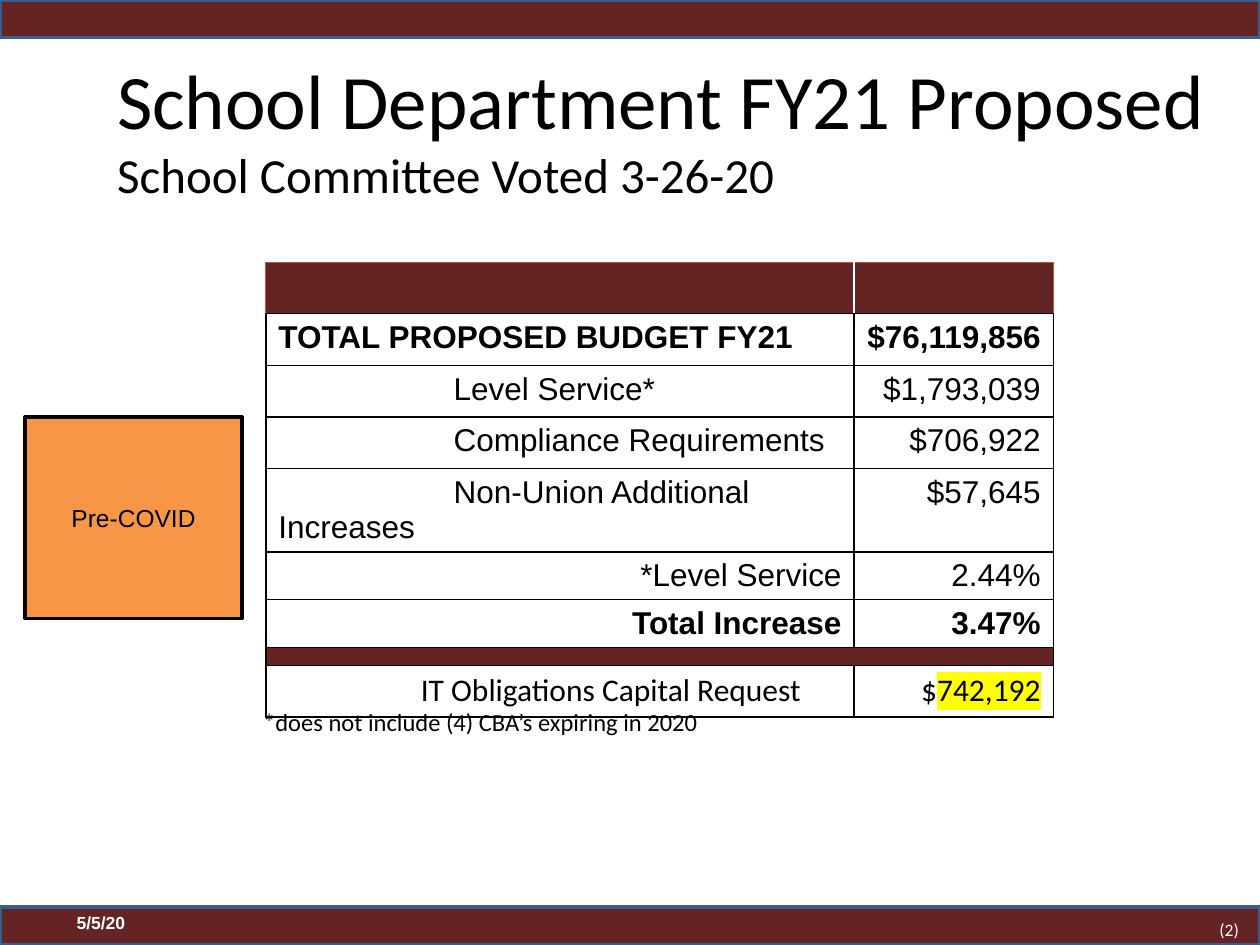
import pptx
import pptx.util
import pptx.dml.color
import pptx.enum.shapes
import pptx.enum.text
import pptx.oxml
import pptx.oxml.ns

Inches, Pt = pptx.util.Inches, pptx.util.Pt
ALIGN, ANCHOR = pptx.enum.text.PP_ALIGN, pptx.enum.text.MSO_ANCHOR
NS = pptx.oxml.ns.nsdecls("a")

# Content
WIDTH, HEIGHT = 10, 7.5
MAROON, BAND_LINE, ORANGE = "632423", "395E89", "F79646"
BLACK, WHITE, YELLOW, RED = "000000", "FFFFFF", "FFFF00", "C0504D"
TITLE = [("School Department FY21 Proposed", 44), ("School Committee Voted 3-26-20", 28)]
INDENT = 1.39
# label, amount, height, bold, font, alignment of label, first-line indent
BUDGET = [
    ("", "", 0.41, False, "Arial", ALIGN.LEFT, 0),
    ("TOTAL PROPOSED BUDGET FY21", "$76,119,856", 0.41, True, "Arial", ALIGN.LEFT, 0),
    ("Level Service*", "$1,793,039", 0.41, False, "Arial", ALIGN.LEFT, INDENT),
    ("Compliance Requirements", "$706,922", 0.41, False, "Arial", ALIGN.LEFT, INDENT),
    ("Non-Union Additional Increases", "$57,645", 0.66, False, "Arial", ALIGN.LEFT, INDENT),
    ("*Level Service", "2.44%", 0.38, False, "Arial", ALIGN.RIGHT, 0),
    ("Total Increase", "3.47%", 0.38, True, "Arial", ALIGN.RIGHT, 0),
    ("", "", 0.14, False, "Arial", ALIGN.LEFT, 0),
    ("IT Obligations Capital Request", "$742,192", 0.41, False, "Calibri", ALIGN.LEFT, 1.13),
]
HEADER, DIVIDER, CAPITAL = 0, 7, 8
COLUMNS = (4.67, 1.58)
# text, position, size, font, bold, colour, top margin
NOTES = [
    ("*does not include (4) CBA’s expiring in 2020", (1.99, 5.56, 4.42, 0.34), 14, "Calibri", False, BLACK, 0.05),
    ("(2)", (9.58, 7.19, 0.5, 0.32), 10, "Calibri", False, WHITE, 0.1),
    ("5/5/20", (0.51, 7.19, 2.33, 0.4), 10, "Arial", True, WHITE, 0.05),
]


def colour(value):
    return pptx.dml.color.RGBColor.from_string(value)


def place(values):
    return [Inches(value) for value in values]


def style(span, size, name, shade=BLACK, bold=False):
    span.font.size, span.font.name, span.font.bold = Pt(size), name, bold
    span.font.color.rgb = colour(shade)


def add_rectangle(page, position, fill, line):
    box = page.shapes.add_shape(pptx.enum.shapes.MSO_SHAPE.RECTANGLE, *place(position))
    box.shadow.inherit = False
    box.fill.solid()
    box.fill.fore_color.rgb = colour(fill)
    box.line.color.rgb = colour(line)
    box.line.width = Pt(2)
    return box


def add_border(cell, side, shade, points):
    cell._tc.get_or_add_tcPr().append(pptx.oxml.parse_xml(
        f'<a:ln{side} {NS} w="{Pt(points)}"><a:solidFill><a:srgbClr val="{shade}"/>'
        f'</a:solidFill></a:ln{side}>'))


def fill_cell(cell, row, column):
    label, amount, _, bold, name, align, indent = BUDGET[row]
    # Borders come before the fill
    for side in "LRTB":
        if row == HEADER and side == "RL"[column]:
            continue
        edge = row == HEADER and side != "B"
        add_border(cell, side, RED if edge else BLACK, 0.75 if edge else 1)
    cell.fill.solid()
    cell.fill.fore_color.rgb = colour(MAROON if row in (HEADER, DIVIDER) else WHITE)
    para = cell.text_frame.paragraphs[0]
    if row == DIVIDER:
        cell.margin_top = cell.margin_bottom = 0
        para._p.append(pptx.oxml.parse_xml(f'<a:endParaRPr {NS} sz="600"/>'))
        return
    para.alignment = ALIGN.RIGHT if column else align
    if indent and not column:
        properties = para._p.get_or_add_pPr()
        properties.set("marL", "0")
        properties.set("indent", str(Inches(indent)))
    text = amount if column else label
    highlighted = row == CAPITAL and column == 1
    for part in ((text[0], text[1:]) if highlighted else (text,)):
        if part:
            span = para.add_run()
            span.text = part
            style(span, 18, name, bold=bold)
    if highlighted:
        span._r.rPr.find(pptx.oxml.ns.qn("a:solidFill")).addnext(pptx.oxml.parse_xml(
            f'<a:highlight {NS}><a:srgbClr val="{YELLOW}"/></a:highlight>'))


def main():
    deck = pptx.Presentation()
    deck.slide_width, deck.slide_height = place((WIDTH, HEIGHT))
    page = deck.slides.add_slide(deck.slide_layouts[5])

    # Bands at top and bottom
    band = 0.04 * HEIGHT
    for top in (0, HEIGHT - band):
        add_rectangle(page, (0, top, WIDTH, band), MAROON, BAND_LINE)

    # Title
    title = page.shapes.title
    title.left, title.top, title.width, title.height = place((0.83, 0.39, 9, 1.25))
    title.text_frame.text = "\v".join(text for text, _ in TITLE)
    title.text_frame.vertical_anchor = ANCHOR.MIDDLE
    para = title.text_frame.paragraphs[0]
    para.alignment = ALIGN.LEFT
    for span, (_, size) in zip(para.runs, TITLE):
        style(span, size, "Calibri")

    # Budget table
    heights = [row[2] for row in BUDGET]
    position = place((2.11, 2.08, sum(COLUMNS), sum(heights)))
    table = page.shapes.add_table(len(BUDGET), len(COLUMNS), *position).table
    table.horz_banding = table.first_row = False
    for column, width in zip(table.columns, COLUMNS):
        column.width = Inches(width)
    for index, height in enumerate(heights):
        table.rows[index].height = Inches(height)
        for column in range(len(COLUMNS)):
            fill_cell(table.cell(index, column), index, column)
    table.cell(DIVIDER, 0).merge(table.cell(DIVIDER, 1))

    # Footnote, page number and date
    for text, position, size, name, bold, shade, margin in NOTES:
        box = page.shapes.add_textbox(*place(position))
        box.text_frame.word_wrap = True
        box.text_frame.margin_top = Inches(margin)
        box.text_frame.text = text
        style(box.text_frame.paragraphs[0].runs[0], size, name, shade, bold)

    # Status box
    box = add_rectangle(page, (0.2, 3.31, 1.72, 1.6), ORANGE, BLACK)
    box.text_frame.text = "Pre-COVID"
    box.text_frame.vertical_anchor = ANCHOR.MIDDLE
    para = box.text_frame.paragraphs[0]
    para.alignment = ALIGN.CENTER
    style(para.runs[0], 14, "Arial")

    deck.save("out.pptx")


if __name__ == "__main__":
    main()
